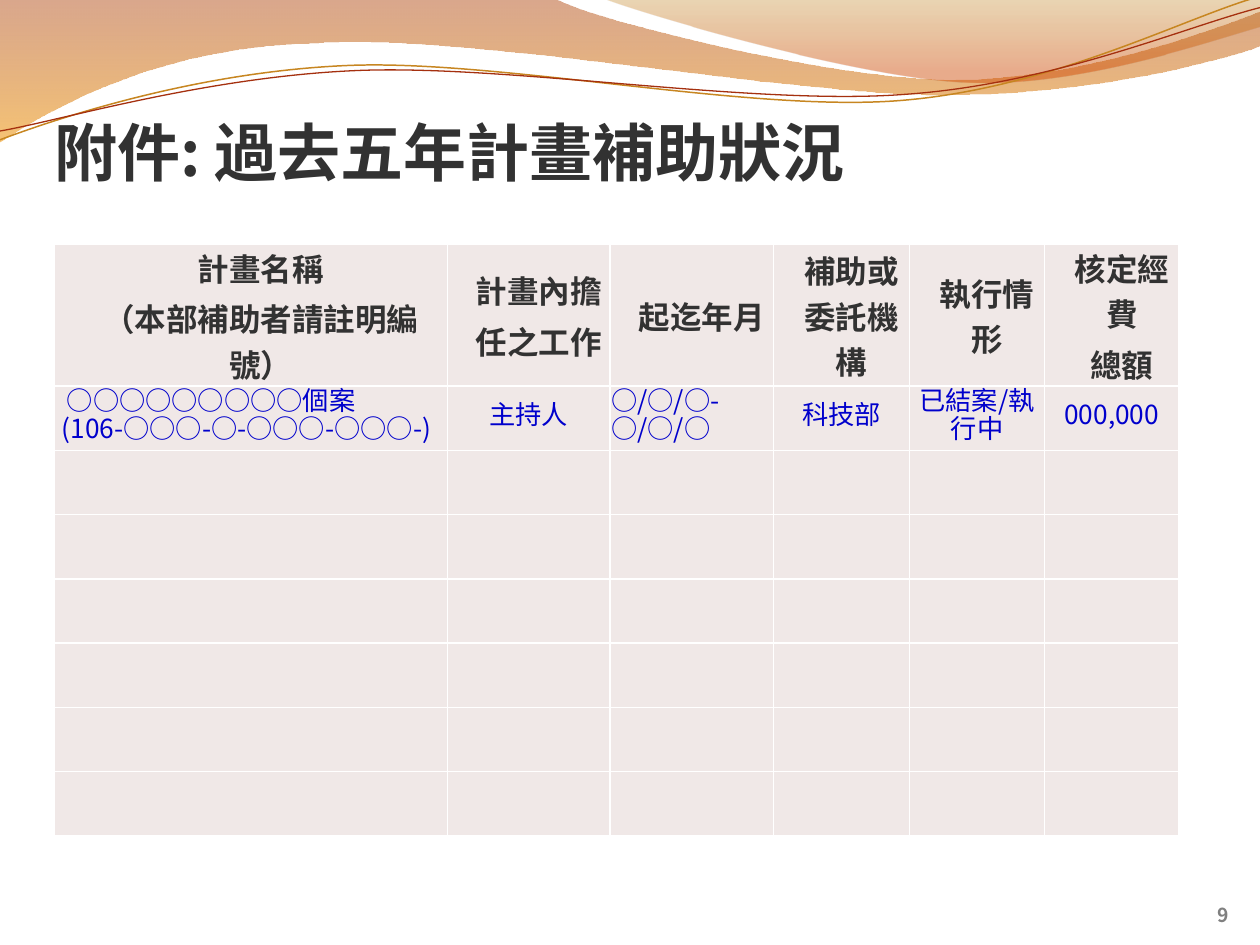
import math

from lxml import etree
from pptx import Presentation
from pptx.dml.color import RGBColor
from pptx.enum.text import MSO_ANCHOR, PP_ALIGN
from pptx.oxml.ns import qn
from pptx.util import Inches, Pt

SANS_SC, SANS_TC = "Noto Sans CJK SC", "Noto Sans CJK TC"
DARK = RGBColor(0x32, 0x32, 0x32)
BLUE = RGBColor(0x00, 0x00, 0xCC)
GRAY = RGBColor(0x80, 0x80, 0x80)
CELL_FILL = RGBColor(0xF0, 0xE8, 0xE7)
RUST, AMBER = RGBColor(0xAC, 0x3D, 0x02), RGBColor(0xEE, 0x91, 0x00)
OCHRE, ORANGE = RGBColor(0xBB, 0x75, 0x07), RGBColor(0xCF, 0x48, 0x00)
GOLD, RED = RGBColor(0xC7, 0x86, 0x21), RGBColor(0xA5, 0x30, 0x0F)

TITLE = [("附件: ", SANS_SC), ("過去五年計畫補助狀況", SANS_TC)]
PAGE_NUMBER = "9"
COLUMN_WIDTHS = [3.12, 1.29, 1.3, 1.08, 1.07, 1.07]
HEADER_HEIGHT, ROW_HEIGHT, ROW_COUNT = 0.61, 0.51, 8
HEADERS = ["計畫名稱\n（本部補助者請註明編號）", "計畫內擔\n任之工作", "起迄年月",
           "補助或委託機構", "執行情形", "核定經費\n總額"]
PROJECT = ["○○○○○○○○○個案\n(106-○○○-○-○○○-○○○-)", "主持人", "○/○/○-○/○/○",
           "科技部", "已結案/執行中", "000,000"]
LEFT_COLUMNS = (0, 2)
NAME_INDENTS = [0.09, 0.05]

# Each outline has a frame (left, top, width, height) and steps on the slide:
# a point (x, y) or a Bezier curve (x1, y1, x2, y2, x, y).
# Gradient stops are (position, colour, opacity in percent).
WAVES = [
    ((-0.01, -0.01, 10.02, 1.14),
     [(0, 0), (4.4, -0.01), (4.75, 0.17, 6.63, 0.63, 7.58, 0.63),
      (8.53, 0.63, 9.58, 0.26, 10, 0.09), (10.01, 0.36),
      (9.83, 0.44, 8.69, 0.76, 7.46, 0.75), (6.22, 0.75, 3.81, 0.28, 2.57, 0.34),
      (1.29, 0.36, 0.46, 0.83, -0.01, 1.13), (0, 0)],
     [(0, RUST, 45), (1, AMBER, 55)]),
    ((4.79, -0.01, 5.21, 0.7),
     [(4.79, -0.01), (5.09, 0.11, 6.82, 0.62, 7.68, 0.65),
      (8.55, 0.69, 9.61, 0.32, 10, 0.21), (10, 0), (4.79, -0.01)],
     [(0, OCHRE, 30), (0.8, ORANGE, 45)]),
]
SWOOSH_ANGLE = -2.7
SWOOSHES = [
    ((-0.02, 0.22, 10.02, 0.71),
     [(0, 1.11), (0.48, 0.93, 1.57, 0.57, 2.76, 0.52),
      (3.95, 0.47, 5.92, 0.89, 7.12, 0.8), (8.33, 0.71, 9.38, 0.15, 9.97, -0.02)],
     GOLD, 0.85),
    ((-0.02, 0.3, 10.03, 0.58),
     [(0, 1.04), (0.47, 0.96, 1.63, 0.61, 2.83, 0.56),
      (4.02, 0.51, 5.97, 0.84, 7.17, 0.75), (8.36, 0.67, 9.41, 0.21, 10, 0.06)],
     RED, 0.75),
]


def to_frame(x, y, frame, angle):
    """Give a slide point as EMU inside a frame that is turned by angle."""
    left, top, width, height = frame
    dx, dy = x - left - width / 2, y - top - height / 2
    cos, sin = math.cos(math.radians(angle)), math.sin(math.radians(angle))
    return (Inches(dx * cos + dy * sin + width / 2),
            Inches(dy * cos - dx * sin + height / 2))


def add_outline(page, frame, steps, angle=0, close=False):
    left, top, width, height = frame
    builder = page.shapes.build_freeform(Inches(left), Inches(top))
    builder.add_line_segments([(Inches(left + width), Inches(top + height))], close=False)
    shape = builder.convert_to_shape()
    outline = next(shape.element.iter(qn("a:path")))
    for child in list(outline):
        outline.remove(child)
    for i, step in enumerate(steps):
        kind = "cubicBezTo" if len(step) == 6 else "lnTo" if i else "moveTo"
        command = etree.SubElement(outline, qn(f"a:{kind}"))
        for point in zip(step[::2], step[1::2]):
            x, y = to_frame(*point, frame, angle)
            etree.SubElement(command, qn("a:pt"), x=str(x), y=str(y))
    if close:
        etree.SubElement(outline, qn("a:close"))
    shape.rotation = angle
    shape.shadow.inherit = False
    return shape


def add_wave(page, frame, steps, stops):
    shape = add_outline(page, frame, steps, close=True)
    shape.line.fill.background()
    shape.fill.gradient()
    shape.fill.gradient_angle = 270
    for stop, (position, color, _) in zip(shape.fill.gradient_stops, stops):
        stop.position = position
        stop.color.rgb = color
    for tag, (_, _, opacity) in zip(shape.element.iter(qn("a:srgbClr")), stops):
        etree.SubElement(tag, qn("a:alpha")).set("val", str(opacity * 1000))


def add_swoosh(page, frame, steps, color, width):
    shape = add_outline(page, frame, steps, SWOOSH_ANGLE)
    shape.fill.background()
    shape.line.color.rgb = color
    shape.line.width = Pt(width)


def style_run(span, size, color, bold, font=SANS_SC):
    span.font.size, span.font.bold, span.font.name = Pt(size), bold, font
    span.font.color.rgb = color
    etree.SubElement(span.font._element, qn("a:ea")).set("typeface", font)


def set_insets(frame, top=0):
    frame.margin_left = frame.margin_right = frame.margin_bottom = 0
    frame.margin_top = Inches(top)
    frame.word_wrap = True
    frame.vertical_anchor = MSO_ANCHOR.BOTTOM


def add_title(page):
    title = page.shapes.title
    title.left, title.top = Inches(0.43), Inches(0.25)
    title.width, title.height = Inches(7.21), Inches(1.25)
    set_insets(title.text_frame, 0.05)
    para = title.text_frame.paragraphs[0]
    para.alignment = PP_ALIGN.LEFT
    for words, font in TITLE:
        span = para.add_run()
        span.text = words
        style_run(span, 36, DARK, True, font)


def format_cell(cell):
    cell.margin_left = cell.margin_right = Inches(0.01)
    cell.margin_top = cell.margin_bottom = 0
    cell.vertical_anchor = MSO_ANCHOR.MIDDLE
    cell.fill.solid()
    cell.fill.fore_color.rgb = CELL_FILL
    properties = cell._tc.get_or_add_tcPr()
    for i, side in enumerate(("lnL", "lnR", "lnT", "lnB")):
        border = etree.Element(qn(f"a:{side}"), w=str(Pt(1)))
        solid = etree.SubElement(border, qn("a:solidFill"))
        etree.SubElement(solid, qn("a:srgbClr")).set("val", "FFFFFF")
        properties.insert(i, border)


def indent(para, inches):
    properties = para._p.get_or_add_pPr()
    properties.set("marL", str(Inches(inches)))
    properties.set("indent", "0")


def fill_header(cell, words):
    cell.text_frame.text = words
    for para in cell.text_frame.paragraphs:
        para.alignment = PP_ALIGN.CENTER
        para.space_before = Pt(2.8)
        indent(para, 0.16)
        style_run(para.runs[0], 18, DARK, True)


def fill_project(cell, words, column):
    cell.text_frame.text = words
    for i, para in enumerate(cell.text_frame.paragraphs):
        para.alignment = PP_ALIGN.LEFT if column in LEFT_COLUMNS else PP_ALIGN.CENTER
        para.line_spacing = Pt(16)
        if column == 0:
            indent(para, NAME_INDENTS[i])
        style_run(para.runs[0], 15, BLUE, False)


def add_project_table(page):
    frame = page.shapes.add_table(ROW_COUNT, len(COLUMN_WIDTHS), Inches(0.43),
                                  Inches(1.94), Inches(8.93), Inches(4.51))
    table = frame.table
    table.first_row = table.horz_banding = False
    for column, width in zip(table.columns, COLUMN_WIDTHS):
        column.width = Inches(width)
    for i, row in enumerate(table.rows):
        row.height = Inches(ROW_HEIGHT if i else HEADER_HEIGHT)
    for cell in table.iter_cells():
        format_cell(cell)
    for i, (header, value) in enumerate(zip(HEADERS, PROJECT)):
        fill_header(table.cell(0, i), header)
        fill_project(table.cell(1, i), value, i)
    frame.height = Inches(4.51)


def add_page_number(page):
    box = page.shapes.add_textbox(Inches(8.92), Inches(6.95), Inches(0.83), Inches(0.4))
    set_insets(box.text_frame)
    box.text_frame.text = PAGE_NUMBER
    para = box.text_frame.paragraphs[0]
    para.alignment = PP_ALIGN.RIGHT
    style_run(para.runs[0], 11, GRAY, True)


def main():
    deck = Presentation()
    deck.slide_width, deck.slide_height = Inches(10), Inches(7.5)
    page = deck.slides.add_slide(deck.slide_layouts[5])
    for wave in WAVES:
        add_wave(page, *wave)
    for swoosh in SWOOSHES:
        add_swoosh(page, *swoosh)
    add_title(page)
    add_project_table(page)
    add_page_number(page)
    # The title stands in front of the waves.
    page.shapes._spTree.insert(2 + len(WAVES) + len(SWOOSHES), page.shapes.title._element)
    deck.save("out.pptx")


if __name__ == "__main__":
    main()
